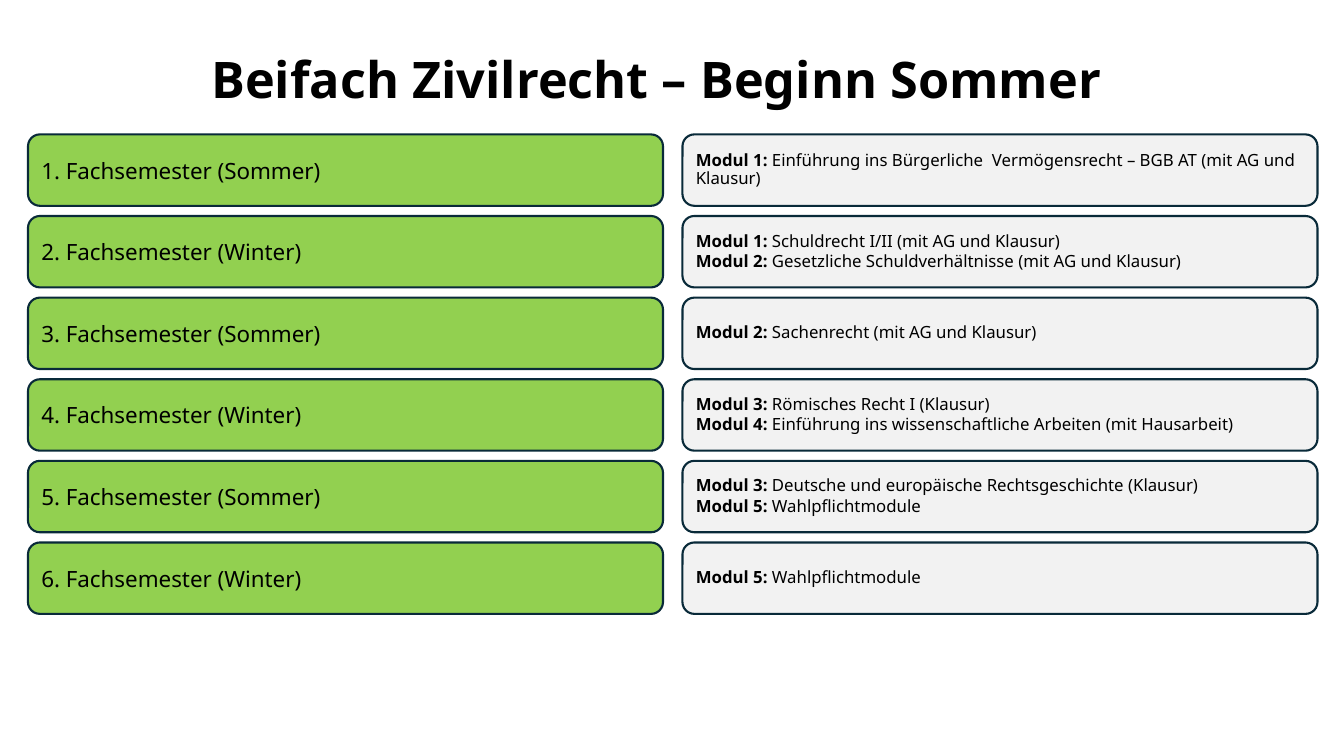
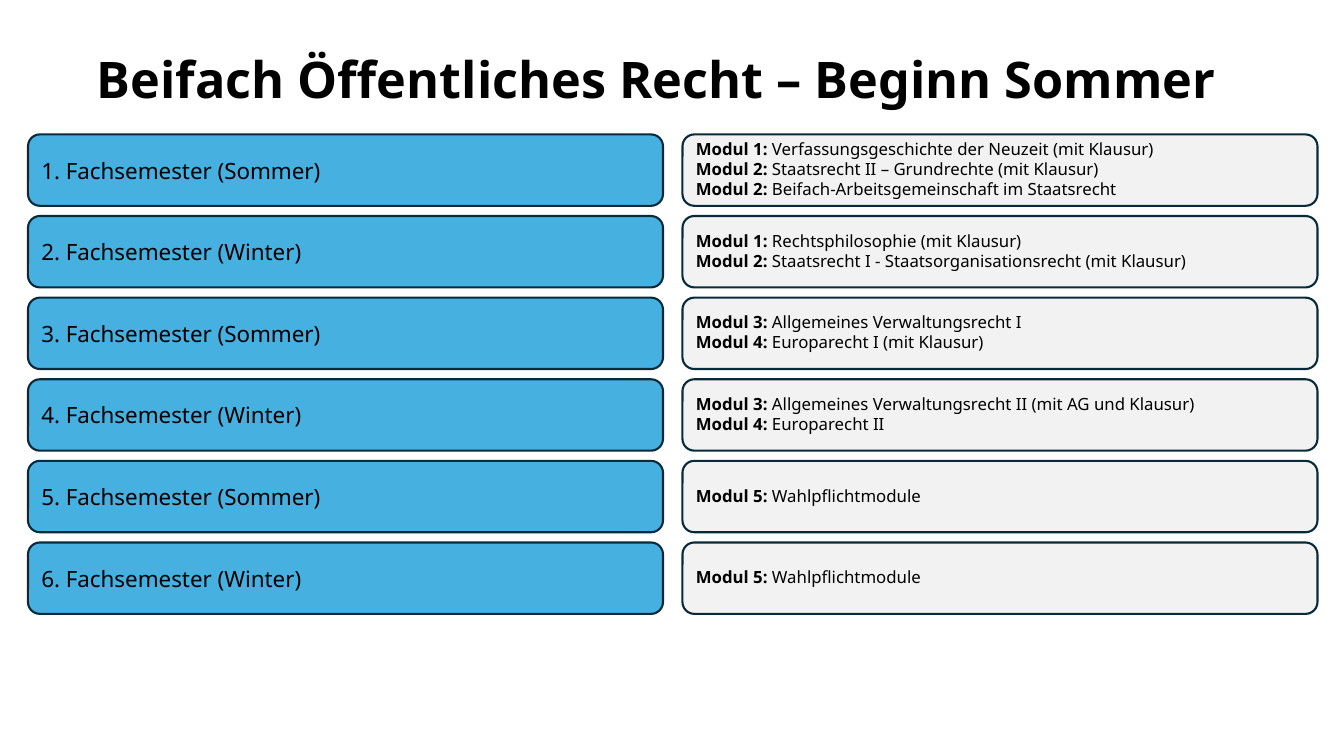
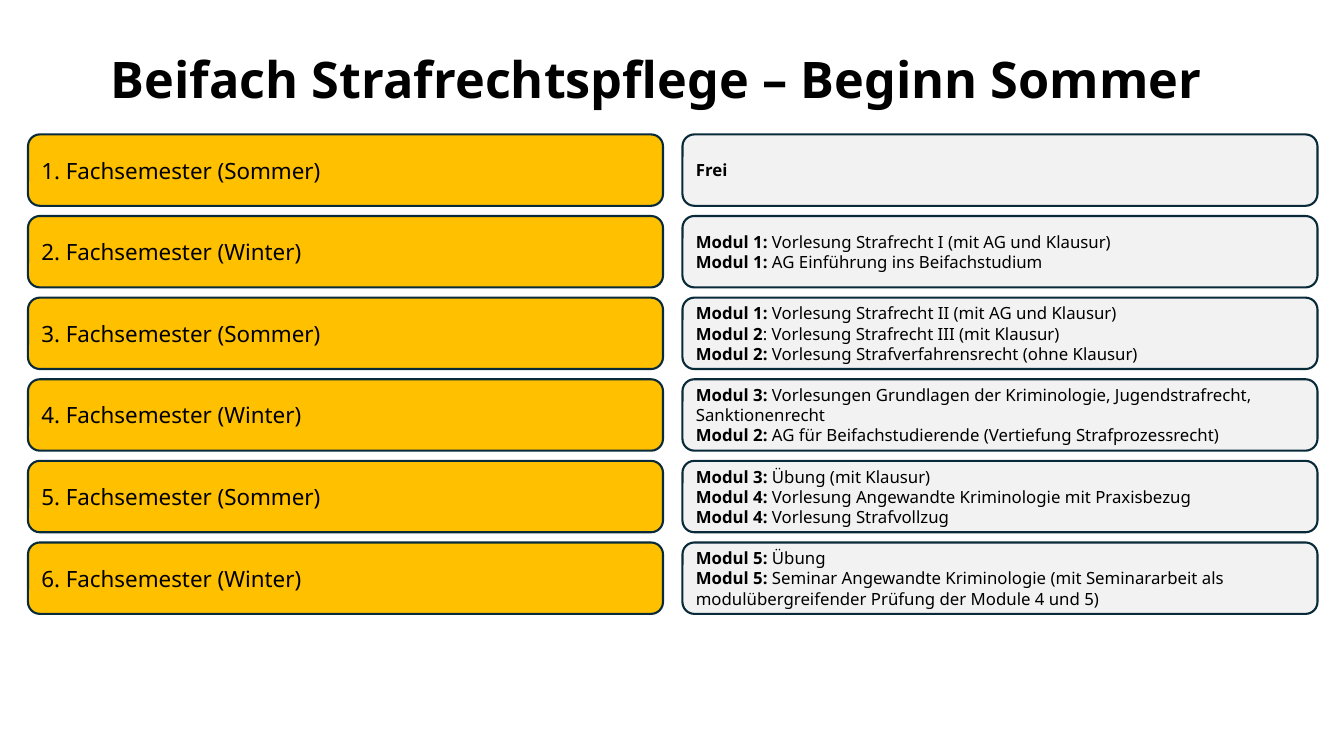
from pptx import Presentation
from pptx.dml.color import RGBColor
from pptx.enum import shapes, text
from pptx.util import Pt

FONT = "Noto Sans"
COLORS = {
    "text": "000000",
    "outline": "092A39",
    "module": "F2F2F2",
    "civil": "92D050",
    "public": "46B1E1",
    "criminal": "FFC000",
}
SEMESTER_LEFT, MODULE_LEFT = 20, 487.5
ROW_TOP, ROW_PITCH = 96, 58.3
BOX_WIDTH, BOX_HEIGHT = 453.6, 51

TIGHT = {"line_spacing": 0.9, "space_after": Pt(1.5)}
SINGLE = {"line_spacing": 1.0, "space_after": Pt(0)}
TITLE = {"line_spacing": 0.9, "alignment": text.PP_ALIGN.CENTER}

# In each module line, "|" ends the bold part.
PLANS = [
    {
        "title": "Beifach Zivilrecht – Beginn Sommer ",
        "color": "civil",
        "spacing": TIGHT,
        "semesters": [
            ["Modul 1: |Einführung ins Bürgerliche  Vermögensrecht – BGB AT (mit AG und Klausur)"],
            ["Modul 1: |Schuldrecht I/II (mit AG und Klausur)",
             "Modul 2: |Gesetzliche Schuldverhältnisse (mit AG und Klausur)"],
            ["Modul 2: |Sachenrecht (mit AG und Klausur)"],
            ["Modul 3: |Römisches Recht I (Klausur)",
             "Modul 4: |Einführung ins wissenschaftliche Arbeiten (mit Hausarbeit)"],
            ["Modul 3: |Deutsche und europäische Rechtsgeschichte (Klausur)",
             "Modul 5: |Wahlpflichtmodule"],
            ["Modul 5: |Wahlpflichtmodule"],
        ],
    },
    {
        "title": "Beifach Öffentliches Recht – Beginn Sommer ",
        "color": "public",
        "spacing": TIGHT,
        "semesters": [
            ["Modul 1: |Verfassungsgeschichte der Neuzeit (mit Klausur)",
             "Modul 2: |Staatsrecht II – Grundrechte (mit Klausur)",
             "Modul 2: |Beifach-Arbeitsgemeinschaft im Staatsrecht"],
            ["Modul 1: |Rechtsphilosophie (mit Klausur)",
             "Modul 2: |Staatsrecht I - Staatsorganisationsrecht (mit Klausur)"],
            ["Modul 3: |Allgemeines Verwaltungsrecht I",
             "Modul 4: |Europarecht I (mit Klausur)"],
            ["Modul 3: |Allgemeines Verwaltungsrecht II (mit AG und Klausur)",
             "Modul 4: |Europarecht II"],
            ["Modul 5: |Wahlpflichtmodule"],
            ["Modul 5: |Wahlpflichtmodule"],
        ],
    },
    {
        "title": "Beifach Strafrechtspflege – Beginn Sommer ",
        "color": "criminal",
        "spacing": SINGLE,
        "semesters": [
            ["Frei|"],
            ["Modul 1: |Vorlesung Strafrecht I (mit AG und Klausur)",
             "Modul 1: |AG Einführung ins Beifachstudium"],
            ["Modul 1: |Vorlesung Strafrecht II (mit AG und Klausur)",
             "Modul 2|: Vorlesung Strafrecht III (mit Klausur)",
             "Modul 2: |Vorlesung Strafverfahrensrecht (ohne Klausur)"],
            ["Modul 3: |Vorlesungen Grundlagen der Kriminologie, Jugendstrafrecht, Sanktionenrecht",
             "Modul 2: |AG für Beifachstudierende (Vertiefung Strafprozessrecht)"],
            ["Modul 3: |Übung (mit Klausur)",
             "Modul 4: |Vorlesung Angewandte Kriminologie mit Praxisbezug",
             "Modul 4: |Vorlesung Strafvollzug"],
            ["Modul 5: |Übung",
             "Modul 5: |Seminar Angewandte Kriminologie (mit Seminararbeit als "
             "modulübergreifender Prüfung der Module 4 und 5)"],
        ],
    },
]


def rgb(name):
    return RGBColor.from_string(COLORS[name])


def set_attributes(target, values):
    for name, value in values.items():
        setattr(target, name, value)


def write_lines(sp, lines, size, spacing):
    """Fill a shape with one paragraph per line; text before "|" is bold."""
    tf = sp.text_frame
    set_attributes(tf, {"word_wrap": True, "vertical_anchor": text.MSO_ANCHOR.MIDDLE})
    for i, line in enumerate(lines):
        p = tf.paragraphs[0] if i == 0 else tf.add_paragraph()
        set_attributes(p, {"alignment": text.PP_ALIGN.LEFT, **spacing})
        strong, _, plain = line.partition("|")
        for part, bold in ((strong, True), (plain, False)):
            if part:
                r = p.add_run()
                r.text = part
                set_attributes(r.font, {"name": FONT, "size": Pt(size), "bold": bold})
                r.font.color.rgb = rgb("text")


def add_title(s, title):
    sp = s.shapes.add_textbox(Pt(27.4), Pt(28.8), Pt(892), Pt(60.5))
    write_lines(sp, [title], 36, TITLE)


def add_box(s, left, top, color, lines, size, spacing):
    sp = s.shapes.add_shape(shapes.MSO_SHAPE.ROUNDED_RECTANGLE,
                            Pt(left), Pt(top), Pt(BOX_WIDTH), Pt(BOX_HEIGHT))
    sp.shadow.inherit = False
    sp.fill.solid()
    sp.fill.fore_color.rgb = rgb(color)
    sp.line.color.rgb = rgb("outline")
    sp.line.width = Pt(1.5)
    write_lines(sp, lines, size, spacing)


def add_plan(prs, plan):
    s = prs.slides.add_slide(prs.slide_layouts[6])
    add_title(s, plan["title"])
    for i, modules in enumerate(plan["semesters"]):
        top = ROW_TOP + i * ROW_PITCH
        season = "Winter" if i % 2 else "Sommer"
        semester = f"|{i + 1}. Fachsemester ({season})"
        add_box(s, MODULE_LEFT, top, "module", modules, 12, plan["spacing"])
        add_box(s, SEMESTER_LEFT, top, plan["color"], [semester], 16, SINGLE)


def main():
    prs = Presentation()
    set_attributes(prs, {"slide_width": Pt(960), "slide_height": Pt(540)})
    for plan in PLANS:
        add_plan(prs, plan)
    prs.save("out.pptx")


if __name__ == "__main__":
    main()
